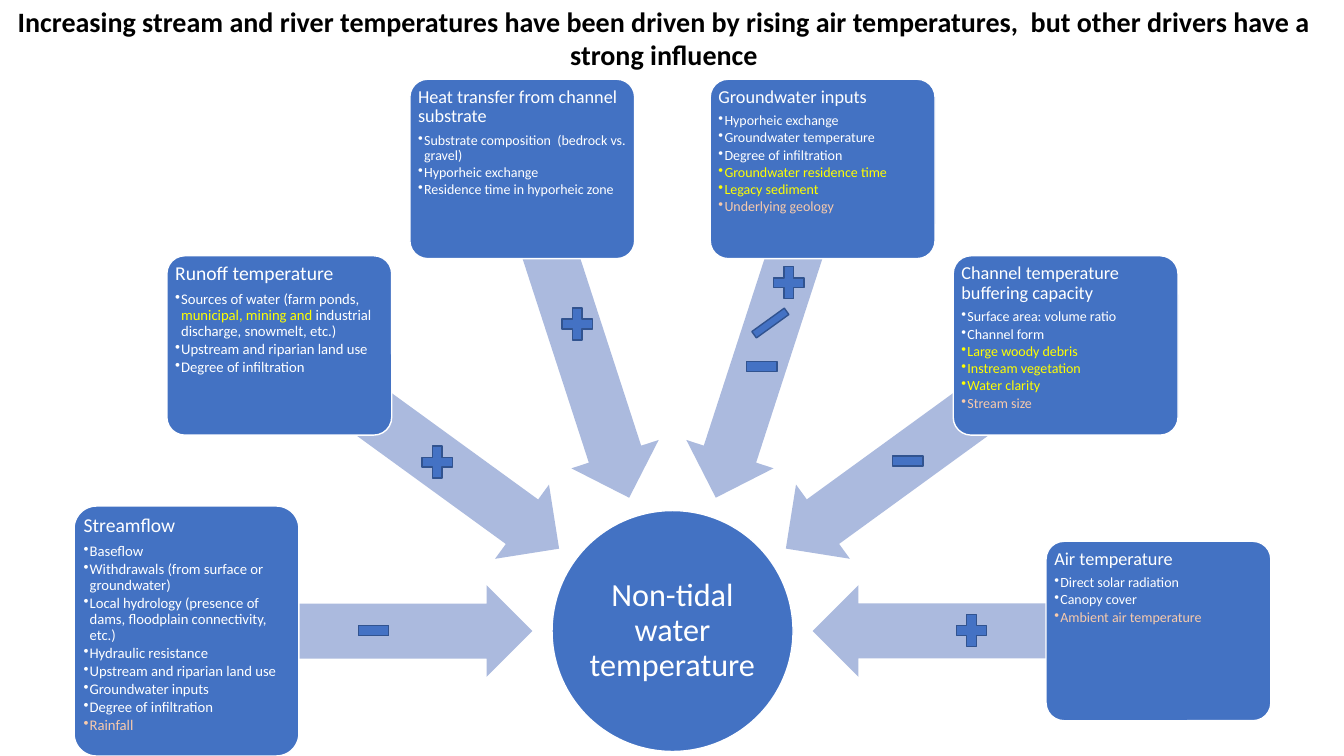
import math

import lxml.etree
import pptx
import pptx.dml.color
import pptx.enum.shapes
import pptx.enum.text
import pptx.oxml.ns
import pptx.util

Inches = pptx.util.Inches
Pt = pptx.util.Pt
SHAPE = pptx.enum.shapes.MSO_SHAPE
ALIGN = pptx.enum.text.PP_ALIGN
ANCHOR = pptx.enum.text.MSO_ANCHOR

COLORS = {
    "black": "000000",
    "white": "FFFFFF",
    "yellow": "FFFF00",
    "peach": "F7CAAC",
    "box": "4372C3",
    "arrow": "ABBADE",
    "sign": "4472C4",
    "sign_line": "31538F",
}

TITLE = ("Increasing stream and river temperatures have been driven by rising air "
         "temperatures,  but other drivers have a strong influence")

HUB_X, HUB_Y, HUB_SIZE = 6.67, 6.26, 2.39
ARROW_RADIUS, BOX_RADIUS = 3.1, 4.82
STEP = 36  # degrees between neighbouring drivers

# Heading, box height, heading size, list size, items as lists of (text, color) runs
DRIVERS = [
    ("Streamflow", 2.48, 14, 10.5, [
        [("Baseflow", "white")],
        [("Withdrawals (from surface or groundwater)", "white")],
        [("Local hydrology (presence of dams, floodplain connectivity, etc.)", "white")],
        [("Hydraulic resistance", "white")],
        [("Upstream and riparian land use", "white")],
        [("Groundwater inputs", "white")],
        [("Degree of infiltration", "white")],
        [("Rainfall", "peach")],
    ]),
    ("Runoff temperature", 1.78, 14, 10.5, [
        [("Sources of water (farm ponds, ", "white"),
         ("municipal, mining and ", "yellow"),
         ("industrial discharge, snowmelt, etc.)", "white")],
        [("Upstream and riparian land use", "white")],
        [("Degree of infiltration", "white")],
    ]),
    ("Heat transfer from channel substrate", 1.78, 13, 10, [
        [("Substrate composition  (bedrock vs. gravel)", "white")],
        [("Hyporheic exchange", "white")],
        [("Residence time in hyporheic zone", "white")],
    ]),
    ("Groundwater inputs", 1.78, 13, 10, [
        [("Hyporheic exchange", "white")],
        [("Groundwater temperature", "white")],
        [("Degree of infiltration", "white")],
        [("Groundwater residence time", "yellow")],
        [("Legacy sediment", "yellow")],
        [("Underlying geology", "peach")],
    ]),
    ("Channel temperature buffering capacity", 1.78, 13, 10, [
        [("Surface area: volume ratio", "white")],
        [("Channel form", "white")],
        [("Large woody debris", "yellow")],
        [("Instream vegetation", "yellow")],
        [("Water clarity", "yellow")],
        [("Stream size", "peach")],
    ]),
    ("Air temperature", 1.78, 13, 10, [
        [("Direct solar radiation", "white")],
        [("Canopy cover", "white")],
        [("Ambient air temperature", "peach")],
    ]),
]

PLUS_SPOTS = [(9.43, 6.04), (4.13, 4.37), (5.52, 3), (7.62, 2.59)]
MINUS_SPOTS = [(3.5, 6.04), (7.35, 3.42), (8.8, 4.36)]


class Diagram:
    font = "Calibri"

    def __init__(self, page):
        self.page = page

    def color(self, name):
        return pptx.dml.color.RGBColor.from_string(COLORS[name])

    def span(self, para, text, size, color, bold=False):
        span = para.add_run()
        span.text = text
        span.font.name = self.font
        span.font.size = Pt(size)
        span.font.bold = bold
        span.font.color.rgb = self.color(color)

    def frame(self, shape, inset, anchor):
        frame = shape.text_frame
        frame.word_wrap = True
        frame.auto_size = pptx.enum.text.MSO_AUTO_SIZE.NONE
        frame.vertical_anchor = anchor
        frame.margin_left = frame.margin_right = Inches(inset)
        frame.margin_top = frame.margin_bottom = Inches(inset)
        return frame

    def title(self, text):
        title = self.page.shapes.title
        title.left, title.top = Inches(0.17), Inches(0.04)
        title.width, title.height = Inches(12.83), Inches(0.67)
        para = self.frame(title, 0, ANCHOR.TOP).paragraphs[0]
        para.alignment = ALIGN.CENTER
        para.line_spacing = 1.0
        para.space_before = Pt(0)
        self.span(para, text, 20, "black", bold=True)

    def shape(self, kind, left, top, width, height, fill, line=None, rotation=0):
        shape = self.page.shapes.add_shape(
            kind, Inches(left), Inches(top), Inches(width), Inches(height))
        shape.shadow.inherit = False
        shape.rotation = rotation
        shape.fill.solid()
        shape.fill.fore_color.rgb = self.color(fill)
        if line:
            shape.line.color.rgb = self.color(line)
            shape.line.width = Pt(1)
        else:
            shape.line.fill.background()
        return shape

    def hub(self, text):
        hub = self.shape(SHAPE.OVAL, HUB_X - HUB_SIZE / 2, HUB_Y - HUB_SIZE / 2,
                         HUB_SIZE, HUB_SIZE, "box", "white")
        para = self.frame(hub, 0.02, ANCHOR.MIDDLE).paragraphs[0]
        para.alignment = ALIGN.CENTER
        para.line_spacing = 0.9
        self.span(para, text, 23, "white")

    def around_hub(self, radius, angle, width, height):
        """Top left corner of an element centred on a ring around the hub."""
        turn = math.radians(angle)
        return (HUB_X + radius * math.cos(turn) - width / 2,
                HUB_Y - radius * math.sin(turn) - height / 2)

    def arrow(self, angle):
        width, height = 3.42, 0.91
        left, top = self.around_hub(ARROW_RADIUS, angle, width, height)
        arrow = self.shape(SHAPE.LEFT_ARROW, left, top, width, height,
                           "arrow", rotation=-angle % 360)
        arrow.adjustments[0] = 0.6

    def bullet(self, para, color):
        properties = para._p.get_or_add_pPr()
        properties.set("marL", str(Inches(0.06)))
        properties.set("indent", str(Inches(-0.07)))
        qn = pptx.oxml.ns.qn
        tint = lxml.etree.SubElement(properties, qn("a:buClr"))
        lxml.etree.SubElement(tint, qn("a:srgbClr")).set("val", COLORS[color])
        lxml.etree.SubElement(properties, qn("a:buChar")).set("char", "•")

    def driver(self, angle, heading, height, heading_size, list_size, items):
        width = 2.23
        left, top = self.around_hub(BOX_RADIUS, angle, width, height)
        box = self.shape(SHAPE.ROUNDED_RECTANGLE, left, top, width, height, "box", "white")
        box.adjustments[0] = 0.1
        frame = self.frame(box, 0.03, ANCHOR.TOP)
        para = frame.paragraphs[0]
        para.alignment = ALIGN.LEFT
        para.line_spacing = 0.9
        self.span(para, heading, heading_size, "white")
        for index, item in enumerate(items):
            para = frame.add_paragraph()
            para.level = 1
            para.alignment = ALIGN.LEFT
            para.line_spacing = 0.9
            para.space_before = Pt(round((0.15 if index else 0.35) * heading_size
                                         if index == 0 else 0.15 * list_size, 1))
            self.bullet(para, item[0][1])
            for text, color in item:
                self.span(para, text, list_size, color)

    def sign(self, kind, left, top, width=0.41, height=0.43, rotation=0):
        self.shape(kind, left, top, width, height, "sign", "sign_line", rotation)


def main():
    deck = pptx.Presentation()
    deck.slide_width, deck.slide_height = Inches(13.33), Inches(7.5)
    diagram = Diagram(deck.slides.add_slide(deck.slide_layouts[5]))
    diagram.title(TITLE)
    diagram.hub("Non-tidal water temperature")
    for index, driver in enumerate(DRIVERS):
        angle = 180 - STEP * index
        diagram.arrow(angle)
        diagram.driver(angle, *driver)
    for left, top in PLUS_SPOTS:
        diagram.sign(SHAPE.MATH_PLUS, left, top)
    for left, top in MINUS_SPOTS:
        diagram.sign(SHAPE.MATH_MINUS, left, top)
    diagram.sign(SHAPE.MATH_MINUS, 7.37, 3.04, 0.54, 0.33, rotation=144.2)
    deck.save("out.pptx")


if __name__ == "__main__":
    main()
